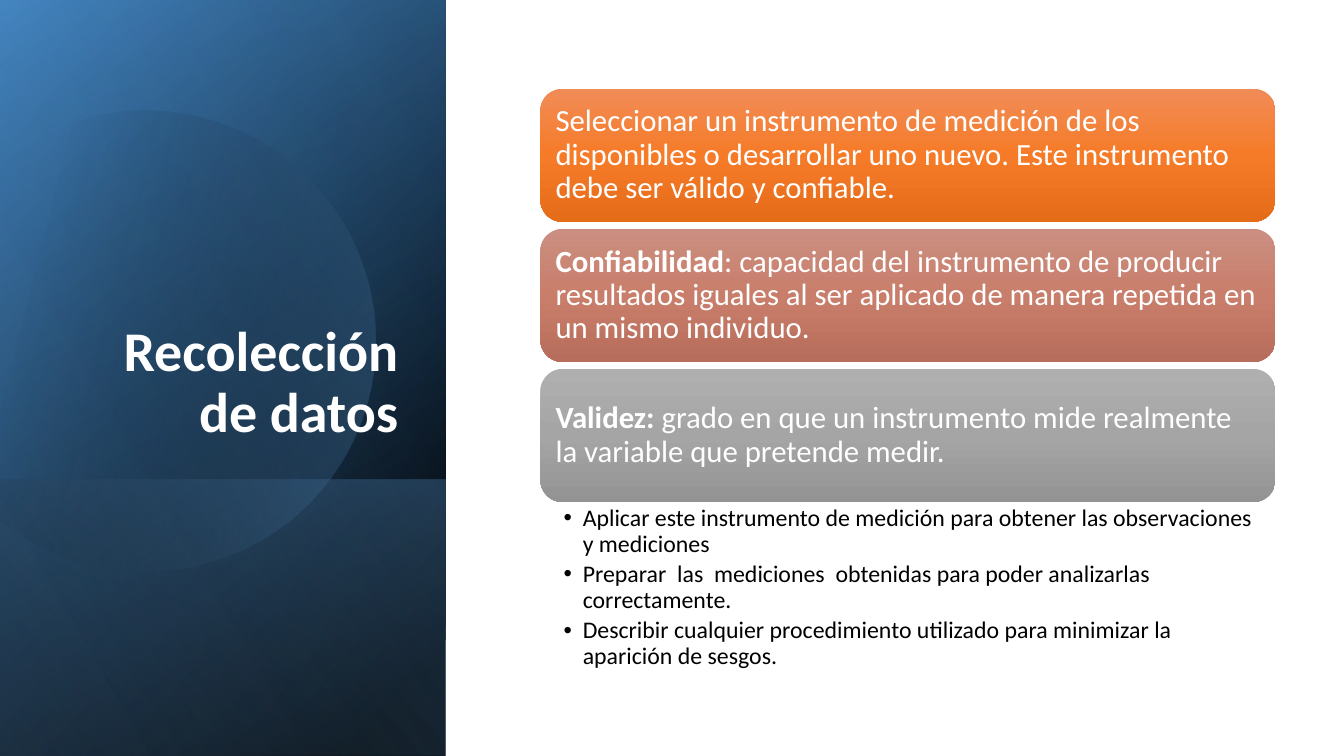
"""Build the slide on data collection with its blue panel, three cards and a list."""
import math

from lxml import etree
from pptx import Presentation
from pptx.dml.color import RGBColor
from pptx.enum import shapes, text
from pptx.oxml.ns import qn
from pptx.util import Pt

PX = 9144
FONT = "Calibri"
WHITE = RGBColor(0xFF, 0xFF, 0xFF)
BLACK = RGBColor(0x00, 0x00, 0x00)
BLUE = RGBColor(0x5B, 0x9B, 0xD5)
DEEP_BLUE = RGBColor(0x2E, 0x75, 0xB6)
PALE_BLUE = RGBColor(0x9D, 0xC3, 0xE6)
ORANGES = [RGBColor(0xF1, 0x8C, 0x57), RGBColor(0xF6, 0x7B, 0x28), RGBColor(0xE5, 0x6C, 0x19)]
CLAYS = [RGBColor(0xCB, 0x8F, 0x81), RGBColor(0xC9, 0x7E, 0x6B), RGBColor(0xB7, 0x6D, 0x5B)]
GRAYS = [RGBColor(0xAF, 0xAF, 0xAF), RGBColor(0xA5, 0xA5, 0xA5), RGBColor(0x93, 0x93, 0x93)]

TITLE = "Recolección de datos"
CARDS = [
    (ORANGES, "", "Seleccionar un instrumento de medición de los disponibles o desarrollar "
                  "uno nuevo. Este instrumento debe ser válido y confiable."),
    (CLAYS, "Confiabilidad", ": capacidad del instrumento de producir resultados iguales al ser "
                             "aplicado de manera repetida en un mismo individuo."),
    (GRAYS, "Validez:", " grado en que un instrumento mide realmente la variable que pretende medir."),
]
STEPS = [
    "Aplicar este instrumento de medición para obtener las observaciones y mediciones",
    "Preparar  las  mediciones  obtenidas para poder analizarlas correctamente.",
    "Describir cualquier procedimiento utilizado para minimizar la aparición de sesgos.",
]

SLIDE_WIDTH, SLIDE_HEIGHT, PANEL_WIDTH = 1333, 750, 442
BASE_LAYERS = [
    (0, [(8, BLACK, 100), (100, DEEP_BLUE, 100)], 50),
    (0, [(0, BLACK, 0), (99, BLUE, 46)], 30),
    (476, [(2, BLUE, 29), (100, BLACK, 30)], 130),
]
DISC_LEFT, DISC_TOP, DISC_WIDTH, DISC_HEIGHT = -55, 106, 427, 457
DISC_START, DISC_ARC, DISC_ARCS = -118, 67, 4
DISC_STOPS = [(29, BLACK, 0), (100, BLUE, 43)]
TOP_LAYER = (0, [(0, BLACK, 0), (99, PALE_BLUE, 11)], 120)
TITLE_BOX = (64, 184, 341, 262)
CARD_LEFT, CARD_TOP, CARD_WIDTH, CARD_HEIGHT, CARD_GAP = 536, 88, 729, 132, 7
CARD_INSET = 6
LIST_HEIGHT = 174


def paint(shape, stops, angle):
    """Give a shape a linear gradient without line or shadow."""
    shape.shadow.inherit = False
    shape.line.fill.background()
    shape.fill.gradient()
    gradient = shape._element.spPr.find(qn("a:gradFill"))
    for child in list(gradient):
        gradient.remove(child)
    stop_list = etree.SubElement(gradient, qn("a:gsLst"))
    for position, color, opacity in stops:
        stop = etree.SubElement(stop_list, qn("a:gs"), pos=str(position * 1000))
        tint = etree.SubElement(stop, qn("a:srgbClr"), val=str(color))
        if opacity < 100:
            etree.SubElement(tint, qn("a:alpha"), val=str(opacity * 1000))
    etree.SubElement(gradient, qn("a:lin"), ang=str(angle * 60000), scaled="0")


def place(shape, left, top, width, height):
    """Move and size a shape in px."""
    shape.left, shape.top = left * PX, top * PX
    shape.width, shape.height = width * PX, height * PX


def prepare_frame(frame, anchor, left, top, right, bottom):
    """Set wrapping, anchor and px margins of a text frame."""
    frame.word_wrap = True
    frame.auto_size = text.MSO_AUTO_SIZE.NONE
    frame.vertical_anchor = anchor
    frame.margin_left, frame.margin_top = left * PX, top * PX
    frame.margin_right, frame.margin_bottom = right * PX, bottom * PX


def format_paragraph(paragraph, size, color, align, after=0):
    """Format a paragraph and all its runs."""
    paragraph.alignment = align
    paragraph.line_spacing = 0.9
    paragraph.space_before, paragraph.space_after = Pt(0), Pt(after)
    for run in paragraph.runs:
        run.font.name, run.font.size = FONT, Pt(size)
        run.font.color.rgb = color


def add_layer(slide, top, stops, angle):
    """Add a panel layer, turned a quarter and mirrored, reaching the slide bottom."""
    height = SLIDE_HEIGHT - top
    layer = slide.shapes.add_shape(shapes.MSO_SHAPE.RECTANGLE, 0, 0, 0, 0)
    place(layer, (PANEL_WIDTH - height) // 2, top + (height - PANEL_WIDTH) // 2, height, PANEL_WIDTH)
    layer.rotation = 90
    layer._element.spPr.find(qn("a:xfrm")).set("flipH", "1")
    paint(layer, stops, angle)


def disc_point(degree, pull=0):
    """Return a point on the disc edge, pulled along its tangent by a share of the radius."""
    radius, angle = DISC_HEIGHT / 2, math.radians(degree)
    return (DISC_WIDTH - radius + radius * (math.cos(angle) - pull * math.sin(angle)),
            radius + radius * (math.sin(angle) + pull * math.cos(angle)))


def add_disc(slide):
    """Add the translucent disc, cut at its left side, from curved segments."""
    right, bottom = DISC_LEFT + DISC_WIDTH, DISC_TOP + DISC_HEIGHT
    builder = slide.shapes.build_freeform(DISC_LEFT, DISC_TOP, scale=PX)
    builder.add_line_segments([(right, DISC_TOP), (right, bottom), (DISC_LEFT, bottom)])
    disc = builder.convert_to_shape()
    outline = next(disc._element.iter(qn("a:path")))
    for child in list(outline):
        outline.remove(child)
    pull = 4 / 3 * math.tan(math.radians(DISC_ARC) / 4)
    segments = [("a:moveTo", [disc_point(DISC_START)])]
    for index in range(DISC_ARCS):
        start = DISC_START + index * DISC_ARC
        end = start + DISC_ARC
        segments.append(("a:cubicBezTo", [disc_point(start, pull), disc_point(end, -pull), disc_point(end)]))
    for tag, points in segments + [("a:close", [])]:
        segment = etree.SubElement(outline, qn(tag))
        for x, y in points:
            etree.SubElement(segment, qn("a:pt"), x=str(round(x * PX)), y=str(round(y * PX)))
    outline.set("w", str(DISC_WIDTH * PX))
    outline.set("h", str(DISC_HEIGHT * PX))
    disc.rotation = 343.9
    paint(disc, DISC_STOPS, 30)


def add_title(slide):
    """Fill the title placeholder and bring it in front of the panel."""
    title = slide.shapes.title
    slide.shapes._spTree.append(title._element)
    place(title, *TITLE_BOX)
    title.text_frame.text = TITLE
    prepare_frame(title.text_frame, text.MSO_ANCHOR.BOTTOM, 10, 5, 10, 5)
    paragraph = title.text_frame.paragraphs[0]
    format_paragraph(paragraph, 40, WHITE, text.PP_ALIGN.RIGHT)
    paragraph.runs[0].font.bold = True


def add_card(slide, top, colors, term, wording):
    """Add a rounded card and its text with an optional bold term."""
    card = slide.shapes.add_shape(shapes.MSO_SHAPE.ROUNDED_RECTANGLE, 0, 0, 0, 0)
    place(card, CARD_LEFT, top, CARD_WIDTH, CARD_HEIGHT)
    paint(card, [(index * 50, color, 100) for index, color in enumerate(colors)], 90)
    label = slide.shapes.add_textbox(0, 0, 0, 0)
    place(label, CARD_LEFT + CARD_INSET, top + CARD_INSET,
          CARD_WIDTH - 2 * CARD_INSET, CARD_HEIGHT - 2 * CARD_INSET)
    prepare_frame(label.text_frame, text.MSO_ANCHOR.MIDDLE, 9, 9, 9, 9)
    paragraph = label.text_frame.paragraphs[0]
    for part, bold in ((term, True), (wording, False)):
        if part:
            run = paragraph.add_run()
            run.text, run.font.bold = part, bold
    format_paragraph(paragraph, 22, WHITE, text.PP_ALIGN.LEFT, 7.7)


def add_steps(slide, top):
    """Fill the body placeholder with the bulleted steps."""
    body = slide.placeholders[1]
    slide.shapes._spTree.append(body._element)
    place(body, CARD_LEFT, top, CARD_WIDTH, LIST_HEIGHT)
    body.text_frame.text = "\n".join(STEPS)
    prepare_frame(body.text_frame, text.MSO_ANCHOR.TOP, 23, 3, 17, 3)
    for paragraph in body.text_frame.paragraphs:
        paragraph.level = 1
        format_paragraph(paragraph, 17, BLACK, text.PP_ALIGN.LEFT, 3.4)
        properties = paragraph._p.get_or_add_pPr()
        properties.set("marL", str(19 * PX))
        properties.set("indent", str(-19 * PX))
        etree.SubElement(properties, qn("a:buChar"), char="•")


def main():
    """Create and save the presentation."""
    presentation = Presentation()
    presentation.slide_width, presentation.slide_height = SLIDE_WIDTH * PX, SLIDE_HEIGHT * PX
    slide = presentation.slides.add_slide(presentation.slide_layouts[1])
    for layer in BASE_LAYERS:
        add_layer(slide, *layer)
    add_disc(slide)
    add_layer(slide, *TOP_LAYER)
    add_title(slide)
    for index, card in enumerate(CARDS):
        add_card(slide, CARD_TOP + index * (CARD_HEIGHT + CARD_GAP), *card)
    add_steps(slide, CARD_TOP + len(CARDS) * (CARD_HEIGHT + CARD_GAP) - CARD_GAP + 1)
    presentation.save("out.pptx")


if __name__ == "__main__":
    main()
